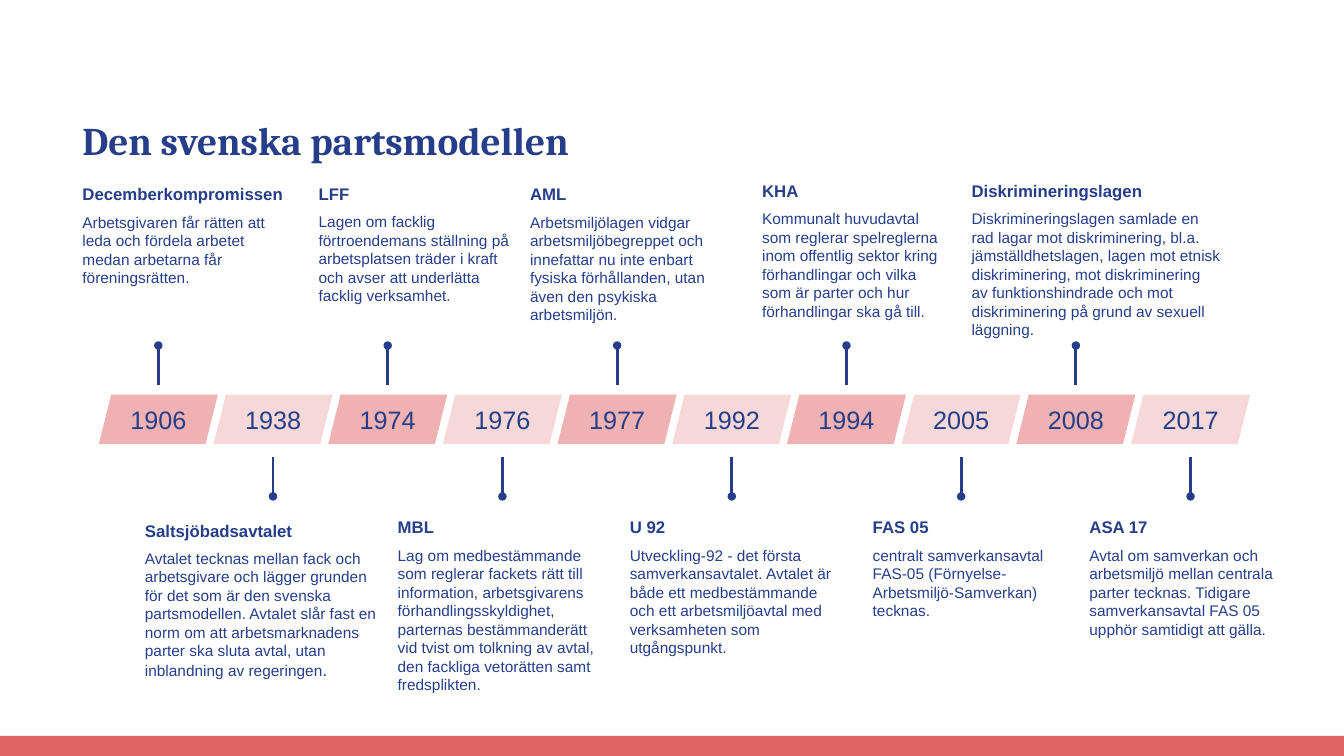
import pptx
import pptx.util
import pptx.dml.color
import pptx.enum.shapes
import pptx.enum.text
import pptx.oxml
import pptx.oxml.ns

Pt = pptx.util.Pt
RGBColor = pptx.dml.color.RGBColor
SHAPE = pptx.enum.shapes.MSO_SHAPE
TEXT = pptx.enum.text

NAVY = RGBColor(0x26, 0x3E, 0x8A)
CORAL = RGBColor(0xE0, 0x64, 0x64)
PINK = RGBColor(0xEF, 0xB1, 0xB1)
PALE_PINK = RGBColor(0xF7, 0xD8, 0xD8)

# Year, heading, description, and left, top, width, height of the text
EVENTS = [
    ("1906", "Decemberkompromissen",
     "Arbetsgivaren får rätten att leda och fördela arbetet medan arbetarna får "
     "föreningsrätten.", (51.8, 128, 157.7, 83)),
    ("1938", "Saltsjöbadsavtalet",
     "Avtalet tecknas mellan fack och arbetsgivare och lägger grunden för det som är "
     "den svenska partsmodellen. Avtalet slår fast en norm om att arbetsmarknadens "
     "parter ska sluta avtal, utan inblandning av regeringen", (96.4, 368.2, 180, 122)),
    ("1974", "LFF",
     "Lagen om facklig förtroendemans ställning på arbetsplatsen träder i kraft och "
     "avser att underlätta facklig verksamhet.", (220.5, 127.7, 157.7, 94)),
    ("1976", "MBL",
     "Lag om medbestämmande som reglerar fackets rätt till information, arbetsgivarens "
     "förhandlingsskyldighet, parternas bestämmanderätt vid tvist om tolkning av avtal, "
     "den fackliga vetorätten samt fredsplikten.", (277, 365.8, 158.4, 135)),
    ("1977", "AML",
     "Arbetsmiljölagen vidgar arbetsmiljöbegreppet och innefattar nu inte enbart fysiska "
     "förhållanden, utan även den psykiska arbetsmiljön.", (371.5, 128, 166.3, 94)),
    ("1992", "U 92",
     "Utveckling-92 - det första samverkansavtalet. Avtalet är både ett medbestämmande "
     "och ett arbetsmiljöavtal med verksamheten som utgångspunkt.",
     (442.8, 365.8, 158.4, 121)),
    ("1994", "KHA",
     "Kommunalt huvudavtal som reglerar spelreglerna inom offentlig sektor kring "
     "förhandlingar och vilka som är parter och hur förhandlingar ska gå till.",
     (537.3, 125.5, 146.2, 108)),
    ("2005", "FAS 05",
     "centralt samverkansavtal FAS-05 (Förnyelse-Arbetsmiljö-Samverkan) tecknas.",
     (616.3, 365.8, 139.7, 81)),
    ("2008", "Diskrimineringslagen",
     "Diskrimineringslagen samlade en rad lagar mot diskriminering, bl.a. "
     "jämställdhetslagen, lagen mot etnisk diskriminering, mot diskriminering av "
     "funktionshindrade och mot diskriminering på grund av sexuell läggning.",
     (686.9, 125.5, 192.2, 121)),
    ("2017", "ASA 17",
     "Avtal om samverkan och arbetsmiljö mellan centrala parter tecknas. Tidigare "
     "samverkansavtal FAS 05 upphör samtidigt att gälla.", (771.1, 365.8, 158.4, 94)),
]


def add_run(p, text, size, font="Arial", bold=False):
    r = p.add_run()
    r.text = text
    r.font.name, r.font.size, r.font.bold = font, Pt(size), bold
    r.font.color.rgb = NAVY


def add_block(s, kind, box, fill):
    sp = s.shapes.add_shape(kind, *map(Pt, box))
    sp.shadow.inherit = False
    sp.fill.solid()
    sp.fill.fore_color.rgb = fill
    sp.line.fill.background()
    return sp


def add_title(s, box, text):
    tf = s.shapes.add_textbox(*map(Pt, box)).text_frame
    tf.word_wrap = True
    tf.vertical_anchor = TEXT.MSO_ANCHOR.BOTTOM
    p = tf.paragraphs[0]
    p.line_spacing = 0.9
    add_run(p, text, 28, "Cambria", True)


def add_pin(s, x, y_dot, y_end):
    line = s.shapes.add_connector(
        pptx.enum.shapes.MSO_CONNECTOR.STRAIGHT, Pt(x), Pt(y_dot), Pt(x), Pt(y_end))
    line.line.color.rgb = NAVY
    line.line.width = Pt(2)
    head = pptx.oxml.parse_xml(
        f'<a:headEnd {pptx.oxml.ns.nsdecls("a")} type="oval"/>')
    line.line._get_or_add_ln().append(head)
    line._element.spPr.append(
        pptx.oxml.parse_xml(f'<a:effectLst {pptx.oxml.ns.nsdecls("a")}/>'))


def add_timeline(s, box, years):
    left, top, width, height = box
    block_width = 85
    pitch = (width - block_width) / (len(years) - 1)
    for i, year in enumerate(years):
        x = left + i * pitch
        above = i % 2 == 0
        sp = add_block(s, SHAPE.PARALLELOGRAM, (x, top, block_width, height),
                       PINK if above else PALE_PINK)
        tf = sp.text_frame
        tf.margin_left = tf.margin_right = 0
        tf.vertical_anchor = TEXT.MSO_ANCHOR.MIDDLE
        p = tf.paragraphs[0]
        p.alignment = TEXT.PP_ALIGN.CENTER
        add_run(p, year, 18)
        # Pins point up from even blocks and down from odd ones
        middle = x + block_width / 2
        if above:
            add_pin(s, middle, top - 35.2, top - 7.2)
        else:
            add_pin(s, middle, top + height + 37.4, top + height + 9)


def add_event(s, box, heading, text):
    tf = s.shapes.add_textbox(*map(Pt, box)).text_frame
    tf.word_wrap = True
    tf.auto_size = TEXT.MSO_AUTO_SIZE.SHAPE_TO_FIT_TEXT
    add_run(tf.paragraphs[0], heading, 12, bold=True)
    p = tf.add_paragraph()
    p.space_before = Pt(6)
    add_run(p, text, 11)
    # A description without its full stop gets a larger one
    if not text.endswith("."):
        add_run(p, ".", 12)


def main():
    prs = pptx.Presentation()
    prs.slide_width, prs.slide_height = Pt(960), Pt(540)
    s = prs.slides.add_slide(prs.slide_layouts[6])

    # Footer band and title
    add_block(s, SHAPE.RECTANGLE, (0, 525.6, 960, 14.4), CORAL)
    add_title(s, (51.8, 42.5, 676.8, 78.5), "Den svenska partsmodellen")

    # Years and their events
    add_timeline(s, (70.6, 282, 822.3, 35.2), [event[0] for event in EVENTS])
    for _, heading, text, box in EVENTS:
        add_event(s, box, heading, text)

    prs.save("out.pptx")


if __name__ == "__main__":
    main()
